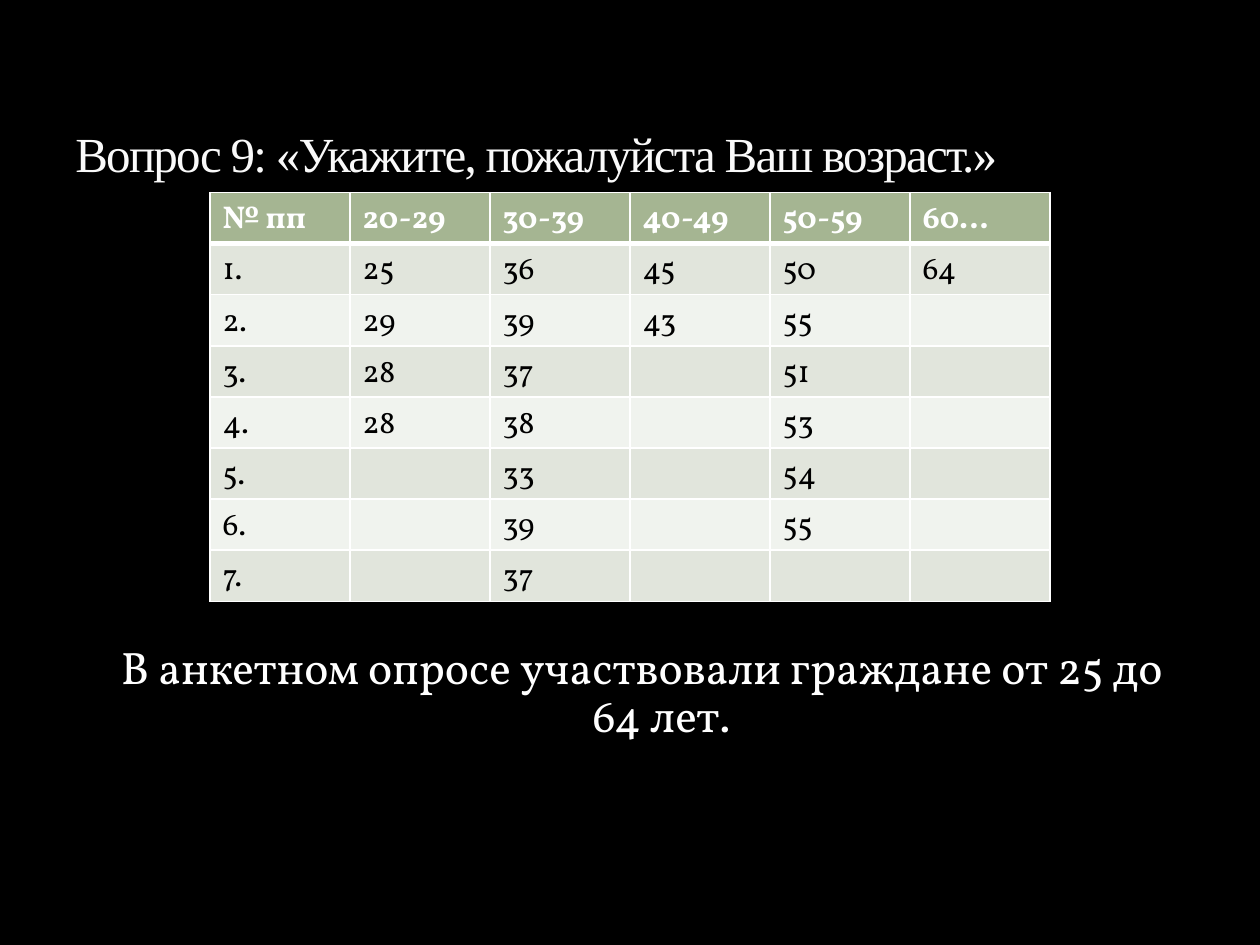
from lxml.etree import SubElement
from pptx import Presentation
from pptx.dml.color import RGBColor
from pptx.enum.text import MSO_ANCHOR, PP_ALIGN
from pptx.oxml import parse_xml
from pptx.oxml.ns import nsdecls, qn
from pptx.util import Pt

BLACK = RGBColor(0x00, 0x00, 0x00)
WHITE = RGBColor(0xFF, 0xFF, 0xFF)
TITLE_WHITE = RGBColor(0xF9, 0xF9, 0xF9)
TITLE_OUTLINE = RGBColor(0x3C, 0x44, 0x22)
HEADER_GREEN = RGBColor(0xA5, 0xB5, 0x92)
BAND_DARK = RGBColor(0xE1, 0xE5, 0xDC)
BAND_LIGHT = RGBColor(0xF0, 0xF3, 0xEE)

SERIF = "Times New Roman"
BODY_FONT = "Vollkorn"

AGE_GROUPS = {
    "20-29": [25, 29, 28, 28],
    "30-39": [36, 39, 37, 38, 33, 39, 37],
    "40-49": [45, 43],
    "50-59": [50, 55, 51, 53, 54, 55],
    "60…": [64],
}
ANSWER_ROWS = max(len(ages) for ages in AGE_GROUPS.values())


def write(frame, text, *, font, size, color, bold=False, align=PP_ALIGN.LEFT):
    """Put text in the frame's first paragraph and return that paragraph."""
    paragraph = frame.paragraphs[0]
    paragraph.alignment = align
    run = paragraph.add_run()
    run.text = text
    run.font.name = font
    run.font.size = Pt(size)
    run.font.bold = bold
    run.font.color.rgb = color
    return paragraph


def add_text_frame(slide, left, top, width, height, anchor):
    box = slide.shapes.add_textbox(Pt(left), Pt(top), Pt(width), Pt(height))
    frame = box.text_frame
    frame.word_wrap = True
    frame.vertical_anchor = anchor
    return frame


def add_title(slide):
    frame = add_text_frame(slide, 36, 12, 648, 96, MSO_ANCHOR.BOTTOM)
    paragraph = write(frame, "Вопрос 9: «Укажите, пожалуйста Ваш возраст.»",
                      font=SERIF, size=28, color=TITLE_WHITE)
    properties = paragraph.runs[0].font._element
    properties.set("spc", "-100")
    properties.insert(0, parse_xml(
        f'<a:ln {nsdecls("a")} w="{Pt(0.25)}"><a:solidFill>'
        f'<a:srgbClr val="{TITLE_OUTLINE}"><a:alpha val="25000"/></a:srgbClr>'
        '</a:solidFill></a:ln>'))


def add_conclusion(slide):
    frame = add_text_frame(slide, 50.4, 366, 633.6, 116.5, MSO_ANCHOR.TOP)
    paragraph = write(frame, "В анкетном опросе участвовали граждане от 25 до 64 лет.",
                      font=BODY_FONT, size=26, color=WHITE, align=PP_ALIGN.CENTER)
    paragraph.space_before = Pt(6)
    paragraph.line_spacing = 0.87
    indents = paragraph._p.get_or_add_pPr()
    indents.set("marL", str(Pt(21.6)))
    indents.set("indent", str(-Pt(21.6)))


def set_borders(cell, widths):
    """Draw white borders; widths maps a side (L, R, T, B) to points."""
    properties = cell._tc.get_or_add_tcPr()
    for position, (side, width) in enumerate(widths.items()):
        line = parse_xml(
            f'<a:ln{side} {nsdecls("a")} w="{Pt(width)}"/>')
        fill = SubElement(line, qn("a:solidFill"))
        SubElement(fill, qn("a:srgbClr"), val=str(WHITE))
        properties.insert(position, line)


def age_table_rows():
    yield ["№ пп", *AGE_GROUPS]
    for index in range(ANSWER_ROWS):
        yield [f"{index + 1}."] + [
            str(ages[index]) if index < len(ages) else ""
            for ages in AGE_GROUPS.values()]


def add_age_table(slide):
    rows = list(age_table_rows())
    table = slide.shapes.add_table(
        len(rows), len(rows[0]), Pt(120), Pt(110), Pt(480), Pt(233.6)).table
    for row_index, row in enumerate(rows):
        header = row_index == 0
        band = BAND_DARK if row_index % 2 else BAND_LIGHT
        widths = {"L": 1, "R": 1, "T": 3 if row_index == 1 else 1,
                  "B": 3 if header else 1}
        for column_index, text in enumerate(row):
            cell = table.cell(row_index, column_index)
            cell.fill.solid()
            cell.fill.fore_color.rgb = HEADER_GREEN if header else band
            set_borders(cell, widths)
            if text:
                write(cell.text_frame, text, font=BODY_FONT, size=18,
                      color=WHITE if header else BLACK, bold=header)


def main():
    presentation = Presentation()
    presentation.slide_width = Pt(720)
    presentation.slide_height = Pt(540)
    slide = presentation.slides.add_slide(presentation.slide_layouts[6])
    slide.background.fill.solid()
    slide.background.fill.fore_color.rgb = BLACK
    add_conclusion(slide)
    add_title(slide)
    add_age_table(slide)
    presentation.save("out.pptx")


if __name__ == "__main__":
    main()
